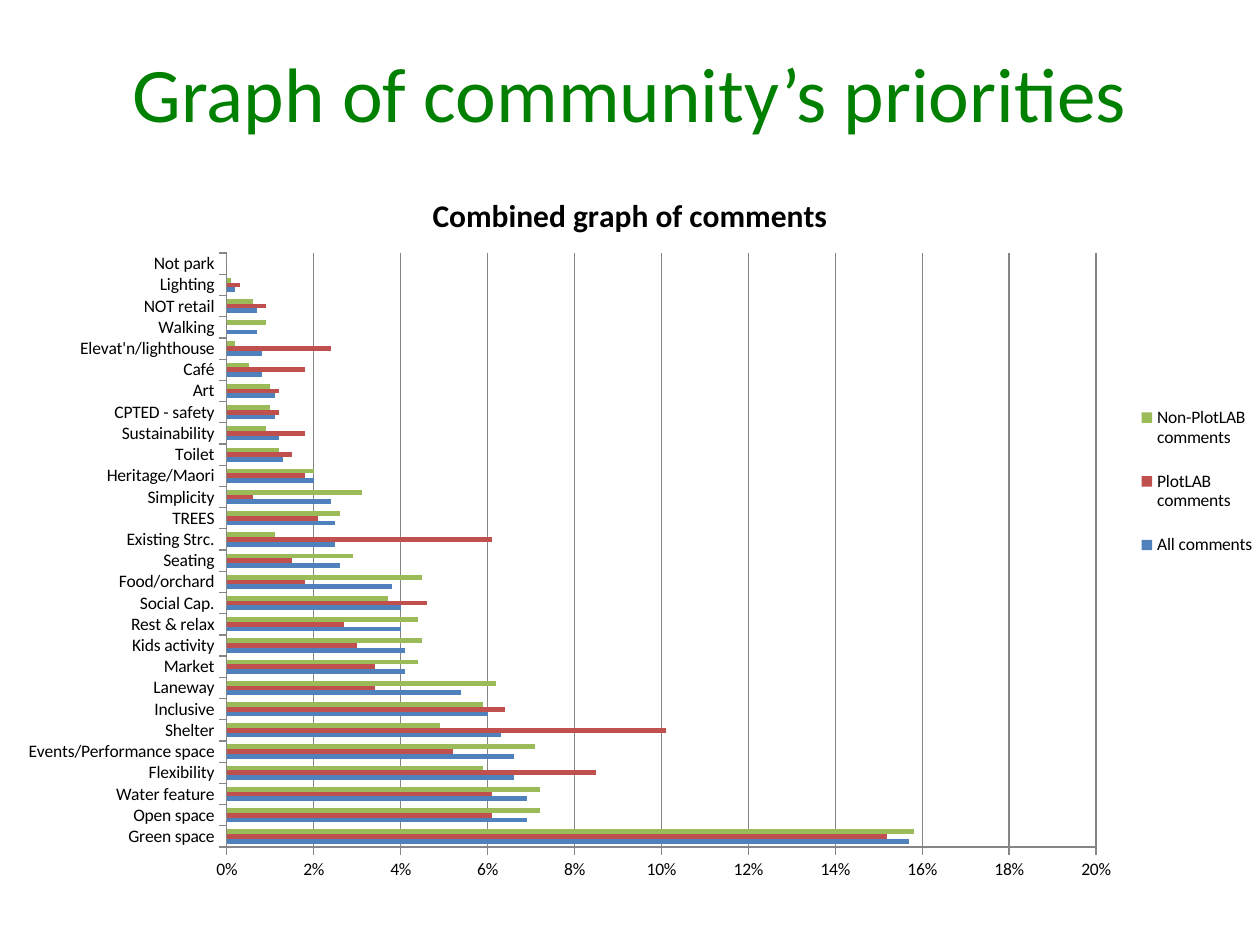
from pptx import Presentation
from pptx.chart.data import CategoryChartData as Data
from pptx.dml.color import RGBColor as RGB
from pptx.enum.chart import XL_CHART_TYPE as Kind, XL_LEGEND_POSITION as Spot, XL_TICK_MARK as Tick
from pptx.enum.text import MSO_ANCHOR as Anchor, PP_ALIGN as Align
from pptx.oxml import parse_xml
from pptx.oxml.ns import nsdecls
from pptx.util import Pt

TITLE = "Graph of community’s priorities"
HEAD = "Combined graph of comments"
NAMES = ("All comments", "PlotLAB comments", "Non-PlotLAB comments")
ROWS = [
    ("Green space", 0.157, 0.152, 0.158),
    ("Open space", 0.069, 0.061, 0.072),
    ("Water feature", 0.069, 0.061, 0.072),
    ("Flexibility", 0.066, 0.085, 0.059),
    ("Events/Performance space", 0.066, 0.052, 0.071),
    ("Shelter", 0.063, 0.101, 0.049),
    ("Inclusive", 0.06, 0.064, 0.059),
    ("Laneway", 0.054, 0.034, 0.062),
    ("Market", 0.041, 0.034, 0.044),
    ("Kids activity", 0.041, 0.03, 0.045),
    ("Rest & relax", 0.04, 0.027, 0.044),
    ("Social Cap.", 0.04, 0.046, 0.037),
    ("Food/orchard", 0.038, 0.018, 0.045),
    ("Seating", 0.026, 0.015, 0.029),
    ("Existing Strc.", 0.025, 0.061, 0.011),
    ("TREES", 0.025, 0.021, 0.026),
    ("Simplicity", 0.024, 0.006, 0.031),
    ("Heritage/Maori", 0.02, 0.018, 0.02),
    ("Toilet", 0.013, 0.015, 0.012),
    ("Sustainability", 0.012, 0.018, 0.009),
    ("CPTED - safety", 0.011, 0.012, 0.01),
    ("Art", 0.011, 0.012, 0.01),
    ("Café", 0.008, 0.018, 0.005),
    ("Elevat'n/lighthouse", 0.008, 0.024, 0.002),
    ("Walking", 0.007, 0, 0.009),
    ("NOT retail", 0.007, 0.009, 0.006),
    ("Lighting", 0.002, 0.003, 0.001),
    ("Not park", 0, 0, 0),
]
THEME = {
    "font": "Calibri",
    "title": RGB(0, 128, 0),
    "text": RGB(0, 0, 0),
    "grid": RGB(134, 134, 134),
    "bars": (RGB(79, 129, 189), RGB(192, 80, 77), RGB(155, 187, 89)),
    "big": Pt(44.1),
    "head": Pt(18),
    "small": Pt(10),
}
WIDE, HIGH = Pt(720), Pt(540)
PLOT = {"x": 0.18, "y": 0.12, "w": 0.69, "h": 0.82}
KEY = {"x": 0.9, "y": 0.3, "w": 0.1, "h": 0.27}


def style(font, size, color, bold=False):
    font.name, font.size, font.bold = THEME["font"], size, bold
    font.color.rgb = color


def layout(box, inner=False):
    target = '<c:layoutTarget val="inner"/>' if inner else ""
    modes = "".join(f'<c:{k}Mode val="edge"/>' for k in "xy")
    sides = "".join(f'<c:{k} val="{v}"/>' for k, v in box.items())
    return parse_xml(f'<c:layout {nsdecls("c")}><c:manualLayout>{target}{modes}{sides}'
                     "</c:manualLayout></c:layout>")


def place(part, box, after=None, inner=False):
    for old in part.xpath("c:layout"):
        part.remove(old)
    if after is None:
        part.insert(0, layout(box, inner))
    else:
        after.addnext(layout(box, inner))


def add_title(slide):
    title = slide.shapes.title
    title.left, title.top, title.width, title.height = 0, Pt(21.6), WIDE, Pt(62)
    frame = title.text_frame
    frame.vertical_anchor = Anchor.MIDDLE
    para = frame.paragraphs[0]
    para.alignment = Align.CENTER
    run = para.add_run()
    run.text = TITLE
    style(run.font, THEME["big"], THEME["title"])


def add_graph(slide):
    cats, *cols = zip(*ROWS)
    data = Data(number_format="0%")
    data.categories = cats
    for name, vals in zip(NAMES, cols):
        data.add_series(name, vals)
    chart = slide.shapes.add_chart(
        Kind.BAR_CLUSTERED, 0, Pt(95), WIDE, Pt(414), data).chart
    style(chart.font, THEME["small"], THEME["text"])

    chart.has_title = True
    run = chart.chart_title.text_frame.paragraphs[0].add_run()
    run.text = HEAD
    style(run.font, THEME["head"], THEME["text"], True)
    chart.chart_title.include_in_layout = False

    plot = chart.plots[0]
    plot.gap_width, plot.vary_by_categories = 150, False
    for series, color in zip(plot.series, THEME["bars"]):
        series.invert_if_negative = False
        series.format.fill.solid()
        series.format.fill.fore_color.rgb = color

    vals = chart.value_axis
    vals.minimum_scale, vals.maximum_scale, vals.major_unit = 0, 0.2, 0.02
    vals.has_major_gridlines = True
    vals.tick_labels.number_format = "0%"
    vals.tick_labels.number_format_is_linked = False
    for axis in (chart.category_axis, vals):
        axis.major_tick_mark, axis.minor_tick_mark = Tick.OUTSIDE, Tick.NONE
    for line in (chart.category_axis.format.line, vals.format.line,
                 vals.major_gridlines.format.line):
        line.color.rgb, line.width = THEME["grid"], Pt(0.75)

    chart.has_legend = True
    key = chart.legend
    key.position, key.include_in_layout = Spot.RIGHT, False
    style(key.font, THEME["small"], THEME["text"])
    root = chart.element
    place(root.xpath("c:chart/c:plotArea")[0], PLOT, inner=True)
    legend = root.xpath("c:chart/c:legend")[0]
    place(legend, KEY, legend.xpath("c:legendPos")[0])


def main():
    deck = Presentation()
    deck.slide_width, deck.slide_height = WIDE, HIGH
    slide = deck.slides.add_slide(deck.slide_layouts[5])
    add_title(slide)
    add_graph(slide)
    deck.save("out.pptx")


if __name__ == "__main__":
    main()
